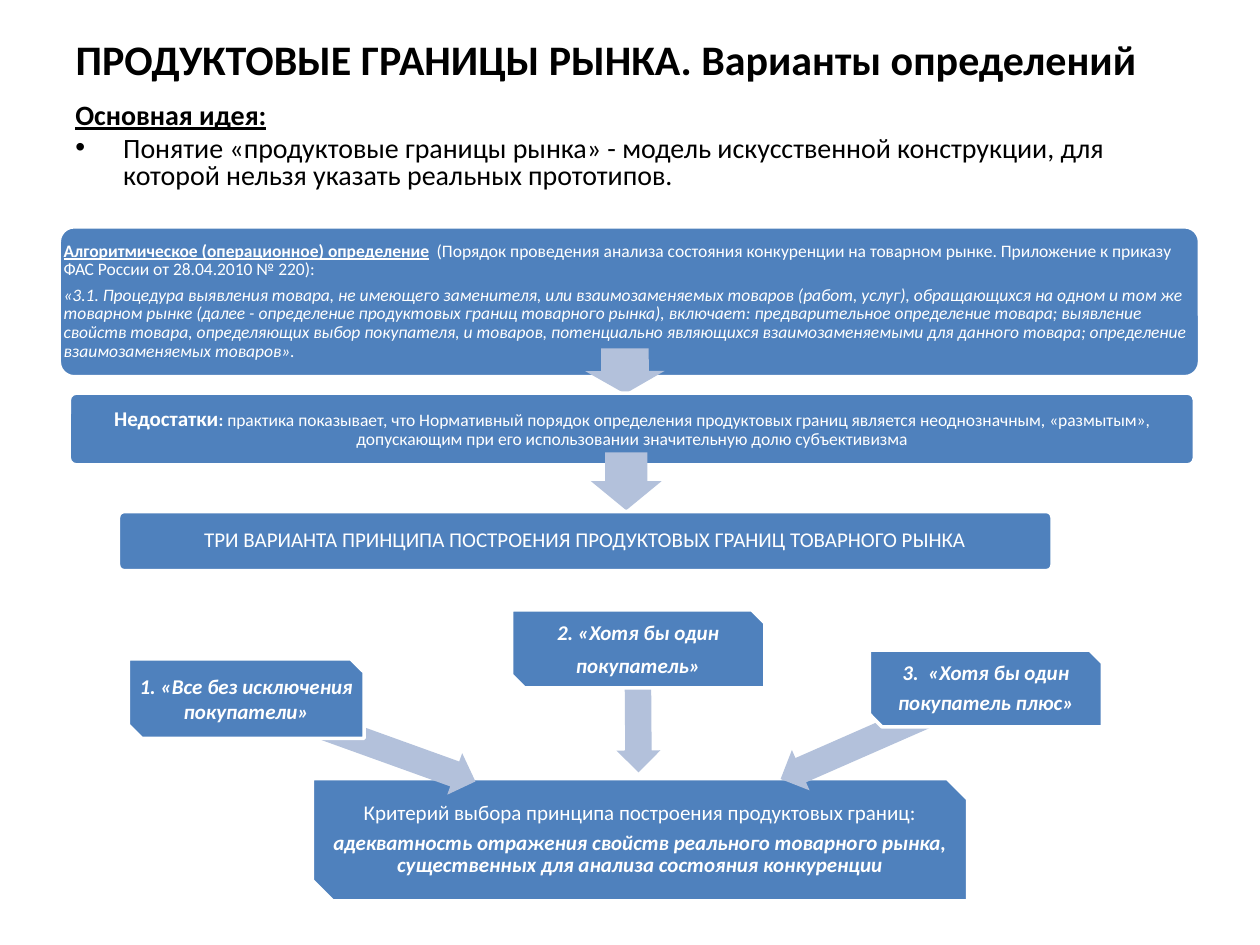
from lxml import etree
from pptx import Presentation
from pptx.dml.color import RGBColor
from pptx.enum.shapes import MSO_SHAPE
from pptx.enum.text import MSO_ANCHOR, PP_ALIGN
from pptx.oxml.ns import qn
from pptx.util import Inches, Pt

WIDTH, HEIGHT = Inches(10), Inches(7.5)
ROUNDED, SNIPPED = MSO_SHAPE.ROUNDED_RECTANGLE, MSO_SHAPE.SNIP_2_DIAG_RECTANGLE
RIGHT_ARROW, LEFT_ARROW = MSO_SHAPE.RIGHT_ARROW, MSO_SHAPE.LEFT_ARROW
LEFT, CENTER = PP_ALIGN.LEFT, PP_ALIGN.CENTER
MIDDLE, TOP = MSO_ANCHOR.MIDDLE, MSO_ANCHOR.TOP
FONT = "Calibri"
BLACK, WHITE, BLUE, PALE = "000000", "FFFFFF", "4F81BD", "B3C1DB"

DEFINITION = [
    [("Алгоритмическое (операционное) определение", 10, "bu"),
     ("  (Порядок проведения анализа состояния конкуренции на товарном рынке. "
      "Приложение к приказу ФАС России от 28.04.2010 № 220):", 10, "")],
    [("«3.1. Процедура выявления товара, не имеющего заменителя, или взаимозаменяемых "
      "товаров (работ, услуг), обращающихся на одном и том же товарном рынке (далее - "
      "определение продуктовых границ товарного рынка), включает: предварительное "
      "определение товара; выявление свойств товара, определяющих выбор покупателя, и "
      "товаров, потенциально являющихся взаимозаменяемыми для данного товара; "
      "определение взаимозаменяемых товаров».", 10, "i")],
]
DRAWBACKS = [
    [("Недостатки", 12, "b"), (":", 10, "b"),
     (" практика показывает, что Нормативный порядок определения продуктовых границ "
      "является неоднозначным, «размытым», допускающим при его использовании "
      "значительную долю субъективизма", 10, "")],
]
PRINCIPLES = [
    [("ТРИ ВАРИАНТА ПРИНЦИПА ПОСТРОЕНИЯ ПРОДУКТОВЫХ ГРАНИЦ ТОВАРНОГО РЫНКА", 12, "")],
]
CRITERION = [
    [("Критерий выбора принципа построения продуктовых границ:", 12, "")],
    [("адекватность отражения свойств реального товарного рынка, "
      "существенных для анализа состояния конкуренции", 12, "bi")],
]
IDEA = [
    [("Основная идея:", 16, "bu")],
    [("Понятие «продуктовые границы рынка» - модель искусственной конструкции, "
      "для которой нельзя указать реальных прототипов.", 16, "")],
]
VARIANTS = [
    ((10.2, 69.73, 18.7, 8.4), ["1. «Все без исключения покупатели»"], 1,
     (28.65, 78.33), 19.3, 199.8),
    ((40.6, 64.53, 20.1, 8.27), ["2. «Хотя бы один", "покупатель»"], 1,
     (50.65, 75.27), 9.7, 269.6),
    ((69, 68.8, 18.5, 8.13), ["3.  «Хотя бы один", "покупатель плюс»"], 0.9,
     (70.1, 77.67), 17.8, 336.3),
]


def color(hex_code):
    """Turn a hex string into a colour."""
    return RGBColor.from_string(hex_code)


def place(left, top, width, height):
    """Turn percentages of the slide's size into lengths."""
    return [int(share * side / 100) for share, side in
            ((left, WIDTH), (top, HEIGHT), (width, WIDTH), (height, HEIGHT))]


def write(frame, paragraphs, ink, align, anchor, spacing=1.0, before=0, after=0):
    """Fill a text frame with paragraphs of (text, size, style) runs."""
    frame.word_wrap = True
    frame.vertical_anchor = anchor
    for index, runs in enumerate(paragraphs):
        paragraph = frame.add_paragraph() if index else frame.paragraphs[0]
        paragraph.alignment = align
        paragraph.line_spacing = spacing
        paragraph.space_before = Pt(before)
        paragraph.space_after = Pt(after)
        for text, size, style in runs:
            run = paragraph.add_run()
            run.text = text
            font = run.font
            font.name, font.size = FONT, Pt(size)
            font.bold, font.italic = "b" in style, "i" in style
            font.underline = "u" in style
            font.color.rgb = color(ink)


def add_title(slide, text):
    """Place and format the slide's title."""
    title = slide.shapes.title
    title.left, title.top, title.width, title.height = place(5, 3.07, 90, 6.27)
    write(title.text_frame, [[(text, 24, "b")]], BLACK, LEFT, MIDDLE)


def add_idea(slide):
    """Add the main idea with its bulleted statement."""
    idea = slide.shapes.add_textbox(*place(5, 10.4, 90, 11.2))
    write(idea.text_frame, IDEA, BLACK, LEFT, TOP, spacing=0.8, before=3.2)
    for paragraph in idea.text_frame.paragraphs:
        properties = paragraph._p.get_or_add_pPr()
        properties.set("marL", str(Inches(0.38)))
        properties.set("indent", str(-Inches(0.38)))
    etree.SubElement(properties, qn("a:buFont")).set("typeface", "Arial")
    etree.SubElement(properties, qn("a:buChar")).set("char", "•")


def add_box(slide, kind, area, paragraphs, align=CENTER, spacing=0.9):
    """Add a blue box with white text."""
    box = slide.shapes.add_shape(kind, *place(*area))
    box.shadow.inherit = False
    if kind == ROUNDED:
        box.adjustments[0] = 0.1
    box.fill.solid()
    box.fill.fore_color.rgb = color(BLUE)
    box.line.color.rgb = color(WHITE)
    box.line.width = Pt(2)
    frame = box.text_frame
    frame.margin_left = frame.margin_right = frame.margin_top = frame.margin_bottom = 0
    after = 0.35 * paragraphs[0][0][1]
    write(frame, paragraphs, WHITE, align, MIDDLE, spacing, after=after)


def add_arrow(slide, kind, center, length, thickness, angle):
    """Add a turned block arrow around its centre, sized in shares of the width."""
    x, y, long, thick = place(*center, length, 0)[:3] + [int(thickness * WIDTH / 100)]
    arrow = slide.shapes.add_shape(kind, x - long // 2, y - thick // 2, long, thick)
    arrow.shadow.inherit = False
    arrow.adjustments[0], arrow.adjustments[1] = 0.6, 0.5
    arrow.rotation = angle
    arrow.fill.solid()
    arrow.fill.fore_color.rgb = color(PALE)
    arrow.line.fill.background()


def main():
    """Build the slide and save it."""
    deck = Presentation()
    deck.slide_width, deck.slide_height = WIDTH, HEIGHT
    slide = deck.slides.add_slide(deck.slide_layouts[5])
    add_title(slide, "ПРОДУКТОВЫЕ ГРАНИЦЫ РЫНКА. Варианты определений")
    add_idea(slide)

    add_box(slide, ROUNDED, (4.7, 24, 90.5, 15.87), DEFINITION, align=LEFT)
    add_arrow(slide, RIGHT_ARROW, (49.6, 39.27), 3.6, 6.3, 89.8)
    add_box(slide, ROUNDED, (5.5, 41.6, 89.3, 7.6), DRAWBACKS)
    add_arrow(slide, RIGHT_ARROW, (49.7, 50.93), 4.6, 5.6, 90)
    add_box(slide, ROUNDED, (9.4, 54.13, 74.1, 6.27), PRINCIPLES)

    add_box(slide, SNIPPED, (24.8, 82.4, 52, 12.93), CRITERION)
    for area, lines, spacing, center, length, angle in VARIANTS:
        add_arrow(slide, LEFT_ARROW, center, length, 3.5, angle)
        paragraphs = [[(line, 12, "bi")] for line in lines]
        add_box(slide, SNIPPED, area, paragraphs, spacing=spacing)
    deck.save("out.pptx")


if __name__ == "__main__":
    main()
